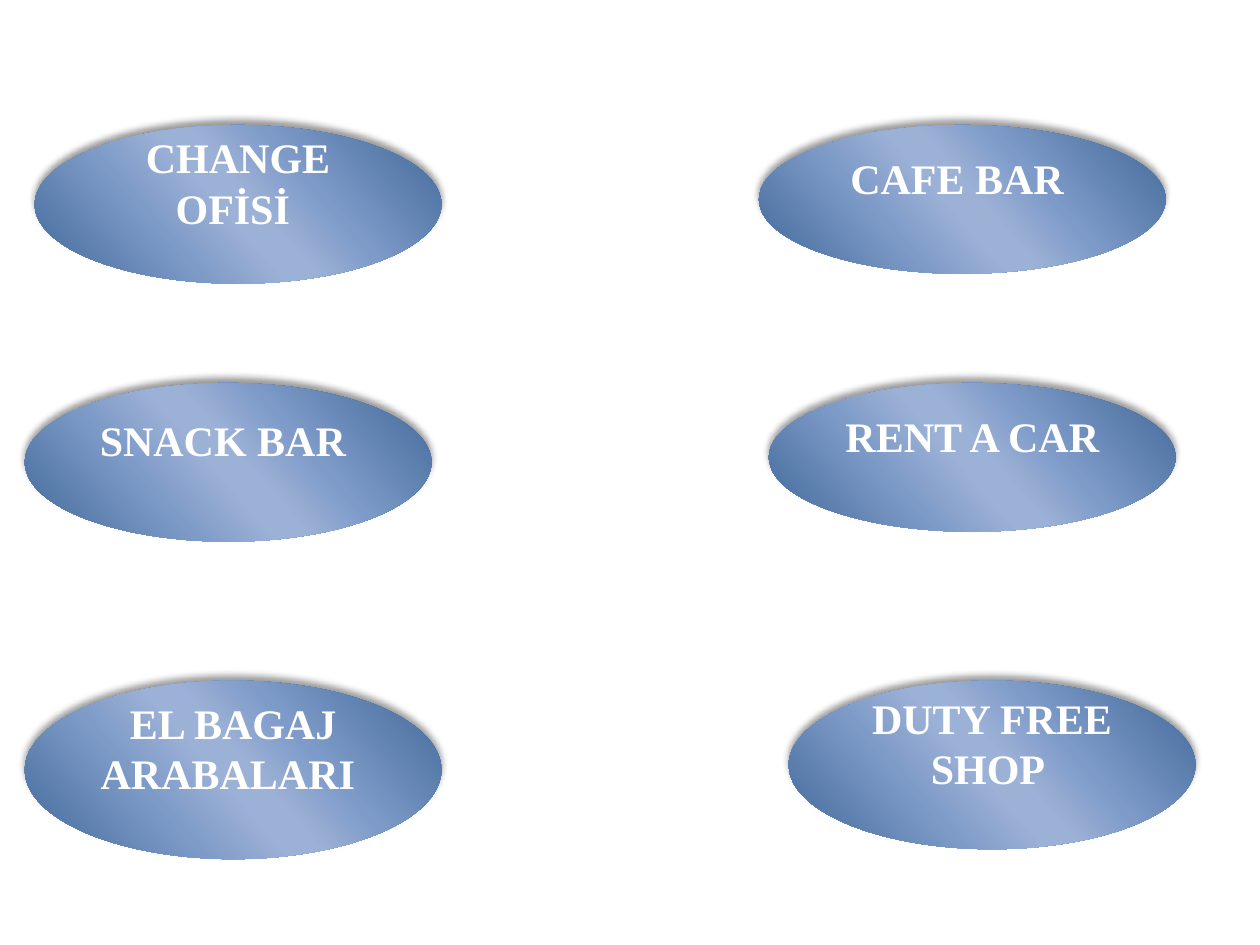
"""Build a slide of six airport services shown as glossy ellipses."""
from dataclasses import dataclass, field

from lxml.etree import SubElement
from pptx import Presentation
from pptx.dml.color import RGBColor
from pptx.enum.shapes import MSO_SHAPE as Shape
from pptx.enum.text import MSO_ANCHOR as Anchor, PP_ALIGN as Align
from pptx.oxml.ns import qn
from pptx.slide import Slide
from pptx.util import Emu, Inches, Pt


@dataclass(frozen=True)
class Theme:
    font: str = "Times New Roman"
    size: float = 24
    text: str = "FFFFFF"
    shadow: str = "000000"
    shadow_opacity: int = 40
    shadow_blur: float = 4
    shadow_distance: float = 3
    shadow_angle: int = 270
    gradient_angle: int = 139
    stops: tuple = (
        (0, "3F6797"), (33, "7D9AC8"), (47, "9CB1D6"),
        (53, "9CB1D6"), (68, "7E9BC8"), (100, "3F6797"),
    )


@dataclass(frozen=True)
class Grid:
    width: int = Inches(10)
    height: int = Inches(7.5)
    cell: int = field(default=Inches(10) // 127)
    left: float = 2.5
    top: float = 12.6

    def span(self, cells: float) -> Emu:
        return Emu(round(cells * self.cell))


@dataclass(frozen=True)
class Service:
    name: str
    column: int
    row: int
    columns: int
    rows: int


THEME = Theme()
GRID = Grid()
SERVICES = (
    Service("RENT A CAR ", 75, 26, 41, 15),
    Service("EL BAGAJ ARABALARI ", 0, 56, 42, 18),
    Service("DUTY FREE SHOP ", 77, 56, 41, 17),
    Service("SNACK BAR ", 0, 26, 41, 16),
    Service("CAFE BAR ", 74, 0, 41, 15),
    Service("CHANGE OFİSİ ", 1, 0, 41, 16),
)


def set_values(target: object, values: dict) -> None:
    for name, value in values.items():
        setattr(target, name, value)


def add_node(parent, tag: str, **values):
    return SubElement(parent, qn(f"a:{tag}"), {key: str(value) for key, value in values.items()})


def degrees(angle: int) -> int:
    return angle * 60000


def percent(share: int) -> int:
    return share * 1000


def add_gloss(shape) -> None:
    shape.line.fill.background()
    properties = shape.fill._xPr
    gradient = add_node(properties, "gradFill", rotWithShape=1)
    properties.find(qn("a:ln")).addprevious(gradient)
    stops = add_node(gradient, "gsLst")
    for position, colour in THEME.stops:
        add_node(add_node(stops, "gs", pos=percent(position)), "srgbClr", val=colour)
    add_node(gradient, "lin", ang=degrees(THEME.gradient_angle), scaled=0)
    shadow = add_node(
        add_node(properties, "effectLst"), "outerShdw",
        blurRad=Pt(THEME.shadow_blur), dist=Pt(THEME.shadow_distance),
        dir=degrees(THEME.shadow_angle), rotWithShape=0,
    )
    colour = add_node(shadow, "srgbClr", val=THEME.shadow)
    add_node(colour, "alpha", val=percent(THEME.shadow_opacity))


def add_service(page: Slide, service: Service) -> None:
    ellipse = page.shapes.add_shape(
        Shape.OVAL,
        GRID.span(GRID.left + service.column), GRID.span(GRID.top + service.row),
        GRID.span(service.columns), GRID.span(service.rows),
    )
    add_gloss(ellipse)
    box = ellipse.text_frame
    set_values(box, {
        "word_wrap": True, "vertical_anchor": Anchor.MIDDLE,
        "margin_top": Inches(0.05), "margin_bottom": Inches(0.4),
    })
    para = box.paragraphs[0]
    para.alignment = Align.CENTER
    span = para.add_run()
    span.text = service.name
    set_values(span.font, {"name": THEME.font, "size": Pt(THEME.size), "bold": True})
    span.font.color.rgb = RGBColor.from_string(THEME.text)


def main() -> None:
    deck = Presentation()
    set_values(deck, {"slide_width": GRID.width, "slide_height": GRID.height})
    page = deck.slides.add_slide(deck.slide_layouts.get_by_name("Blank"))
    for service in SERVICES:
        add_service(page, service)
    deck.save("out.pptx")


if __name__ == "__main__":
    main()
